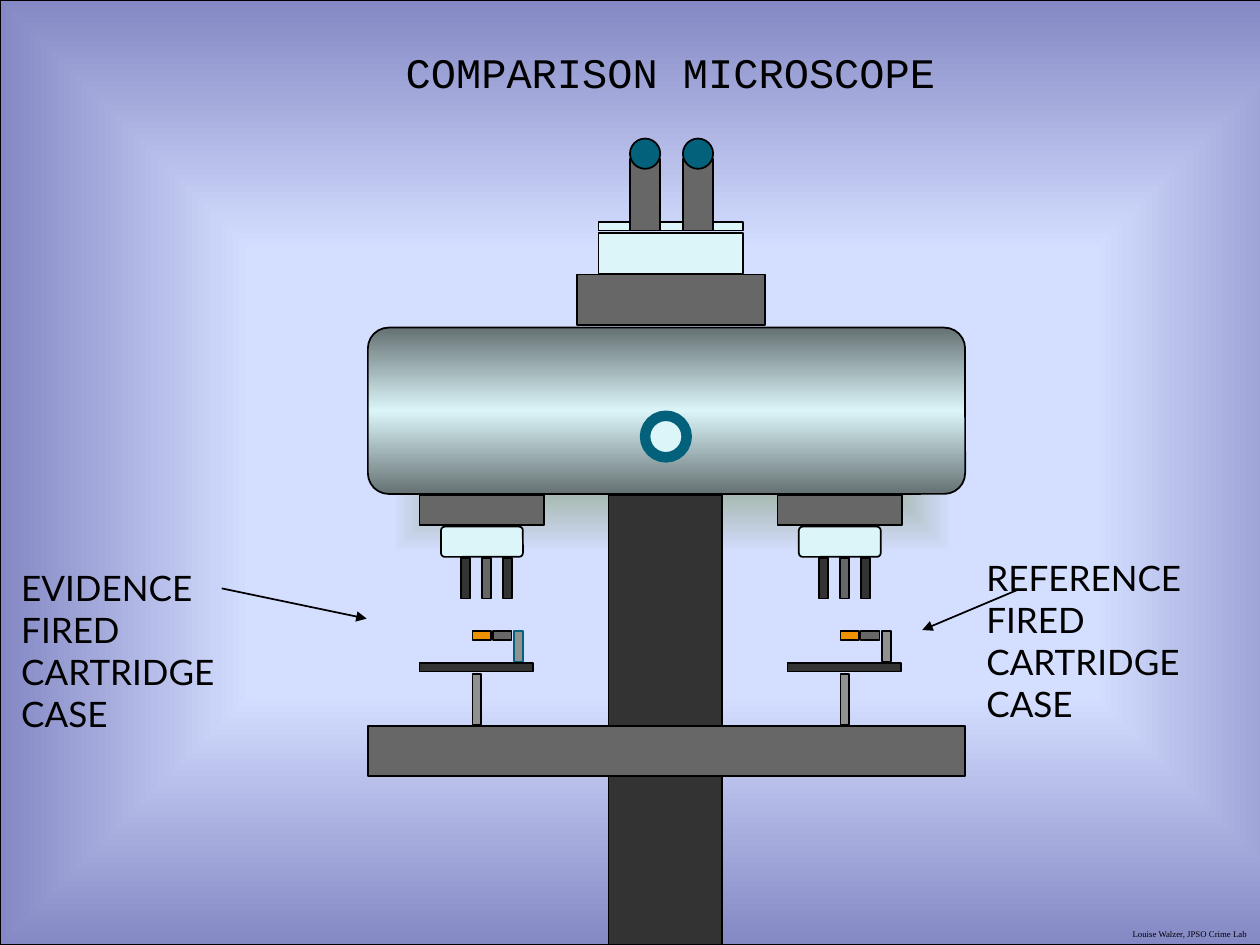
from dataclasses import dataclass

from lxml import etree
from pptx import Presentation
from pptx.dml.color import RGBColor
from pptx.enum import shapes, text
from pptx.oxml import ns
from pptx.util import Inches, Pt


@dataclass(frozen=True)
class Theme:
    """Colours, fonts and type sizes of the slide."""
    ink: str = "000000"
    dark: str = "333333"
    grey: str = "676767"
    steel: str = "919191"
    pale: str = "DBF5F9"
    shade: str = "657173"
    teal: str = "04617B"
    brass: str = "EF9100"
    backdrop: tuple = ((0, "96AB94"), (17, "D4DEFF"), (47, "D4DEFF"), (100, "8488C4"))
    title_font: str = "Courier New"
    label_font: str = "Lato"
    credit_font: str = "Times New Roman"
    title_size: float = 24
    label_size: float = 20
    credit_size: float = 5


T = Theme()
RECT = shapes.MSO_SHAPE.RECTANGLE
ROUND = shapes.MSO_SHAPE.ROUNDED_RECTANGLE
OVAL = shapes.MSO_SHAPE.OVAL


def add_part(s, box, fill, kind=RECT, line=T.ink, width=1):
    """Add one outlined shape in a box of inches."""
    sp = s.shapes.add_shape(kind, *map(Inches, box))
    sp.shadow.inherit = False
    sp.fill.solid()
    sp.fill.fore_color.rgb = RGBColor.from_string(fill)
    sp.line.color.rgb = RGBColor.from_string(line)
    sp.line.width = Pt(width)
    if kind == ROUND:
        sp.adjustments[0] = 0.125
    return sp


def set_gradient(sp, stops, angle=None):
    """Fill a shape with a linear gradient, or from its centre without an angle."""
    sp.fill.gradient()
    grad = sp.element.spPr.find(ns.qn("a:gradFill"))
    grad.clear()
    stop_list = etree.SubElement(grad, ns.qn("a:gsLst"))
    for pos, colour in stops:
        gs = etree.SubElement(stop_list, ns.qn("a:gs"), pos=str(pos * 1000))
        etree.SubElement(gs, ns.qn("a:srgbClr"), val=colour)
    if angle is None:
        centre = etree.SubElement(grad, ns.qn("a:path"), path="shape")
        etree.SubElement(centre, ns.qn("a:fillToRect"),
                         **{side: "50000" for side in "ltrb"})
    else:
        etree.SubElement(grad, ns.qn("a:lin"), ang=str(angle * 60000), scaled="0")


def write(sp, lines, font, size, align=text.PP_ALIGN.LEFT, wrap=False):
    """Write lines as paragraphs with one format."""
    tf = sp.text_frame
    tf.word_wrap = wrap
    tf.auto_size = text.MSO_AUTO_SIZE.SHAPE_TO_FIT_TEXT
    tf.vertical_anchor = text.MSO_ANCHOR.TOP
    for i, line in enumerate(lines):
        p = tf.paragraphs[0] if i == 0 else tf.add_paragraph()
        p.alignment = align
        p.space_before = Pt(0)
        r = p.add_run()
        r.text = line
        r.font.name = font
        r.font.size = Pt(size)
        r.font.color.rgb = RGBColor.from_string(T.ink)


def add_arrow(s, start, end):
    """Draw an arrow between two points."""
    c = s.shapes.add_connector(shapes.MSO_CONNECTOR.STRAIGHT,
                               *map(Inches, start + end))
    c.line.color.rgb = RGBColor.from_string(T.ink)
    c.line.width = Pt(1)
    etree.SubElement(c.line._get_or_add_ln(), ns.qn("a:tailEnd"), type="triangle")
    etree.SubElement(c.element.spPr, ns.qn("a:effectLst"))


def add_backdrop(s, box):
    """Cover the box with the centred gradient."""
    set_gradient(add_part(s, box, T.pale, width=0.75), T.backdrop)


def add_title(s, box, title):
    """Move the title placeholder into the box, above the backdrop."""
    sp = s.shapes.title
    sp.left, sp.top, sp.width, sp.height = map(Inches, box)
    write(sp, [title], T.title_font, T.title_size, text.PP_ALIGN.CENTER, True)
    sp.element.getparent().append(sp.element)


def add_body(s, box):
    """Draw the bridge of the microscope with its focus ring."""
    x, y, w, h = box
    bridge = add_part(s, box, T.pale, ROUND)
    set_gradient(bridge, ((0, T.shade), (50, T.pale), (100, T.shade)), 90)
    add_part(s, (x + w / 2 - 0.17, y + 0.7, 0.33, 0.33), T.pale, OVAL, T.teal, 6)


def add_head(s, box):
    """Draw the neck and the two eyepieces."""
    x, y, w, h = box
    add_part(s, (x, y + h - 0.4, w, 0.4), T.grey)
    add_part(s, (x + 0.17, y + 0.75, 1.15, 0.32), T.pale)
    add_part(s, (x + 0.17, y + 0.66, 1.15, 0.07), T.pale)
    for dx in (0.42, 0.84):
        add_part(s, (x + dx, y + 0.16, 0.24, 0.57), T.grey)
        add_part(s, (x + dx, y, 0.24, 0.24), T.teal, OVAL)


def add_objective(s, box):
    """Draw a lens holder with three lenses."""
    x, y, w, h = box
    add_part(s, (x, y, w, 0.24), T.grey)
    add_part(s, (x + 0.17, y + 0.25, 0.65, 0.24), T.pale, ROUND)
    for i, fill in enumerate((T.dark, T.grey, T.dark)):
        add_part(s, (x + 0.33 + i / 6, y + 0.5, 0.07, 0.32), fill)


def add_stage(s, box, stand_line):
    """Draw a stage that carries a cartridge case."""
    x, y, w, h = box
    add_part(s, (x + 0.42, y + 0.34, 0.07, 0.4), T.steel)
    add_part(s, (x, y + 0.25, w, 0.07), T.dark)
    add_part(s, (x + 0.75, y, 0.07, 0.24), T.steel, line=stand_line)
    for dx, fill in ((0.42, T.brass), (0.58, T.grey)):
        add_part(s, (x + dx, y, 0.15, 0.07), fill)


def add_stand(s, box):
    """Draw the column and the base bar that spans the box."""
    x, y, w, h = box
    add_part(s, (x + w / 2 - 0.46, y, 0.9, h), T.dark)
    add_part(s, (x, y + 1.83, w, 0.4), T.grey)


def add_label(s, box, lines, font=T.label_font, size=T.label_size):
    """Place a text label in the box."""
    write(s.shapes.add_textbox(*map(Inches, box)), lines, font, size)


def main():
    """Build and save the slide."""
    prs = Presentation()
    prs.slide_width, prs.slide_height = Inches(10), Inches(7.5)
    s = prs.slides.add_slide(prs.slide_layouts[5])
    add_backdrop(s, (0, 0, 10.67, 7.5))
    add_body(s, (2.92, 2.6, 4.74, 1.32))
    add_head(s, (4.58, 1.1, 1.49, 1.48))
    add_stand(s, (2.92, 3.93, 4.74, 3.57))
    for x in (3.33, 6.17):
        add_objective(s, (x, 3.93, 0.99, 0.82))
    for x, stand_line in ((3.33, T.teal), (6.25, T.ink)):
        add_stage(s, (x, 5.01, 0.9, 0.74), stand_line)
    case = ["FIRED", "CARTRIDGE", "CASE"]
    add_label(s, (7.73, 4.37, 1.79, 1.43), ["REFERENCE"] + case)
    add_arrow(s, (8.08, 4.68), (7.32, 5))
    add_label(s, (0.07, 4.45, 1.79, 1.43), ["EVIDENCE"] + case)
    add_arrow(s, (1.76, 4.67), (2.91, 4.91))
    add_title(s, (2.49, 0.32, 5.66, 0.5), "COMPARISON MICROSCOPE")
    add_label(s, (8.89, 7.32, 1.11, 0.18), ["Louise Walzer, JPSO Crime Lab"],
              T.credit_font, T.credit_size)
    prs.save("out.pptx")


if __name__ == "__main__":
    main()
